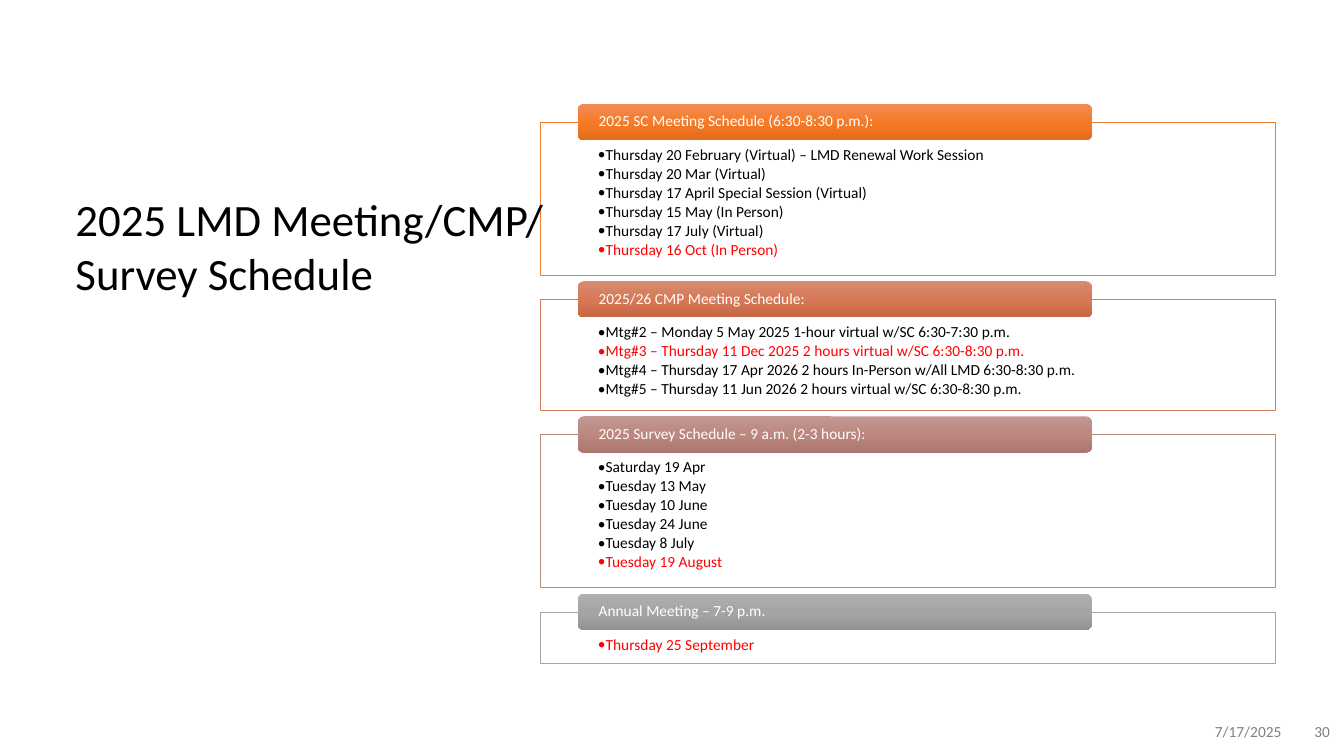
from copy import deepcopy

from lxml.etree import SubElement
from pptx import Presentation
from pptx.dml.color import RGBColor
from pptx.enum.shapes import MSO_SHAPE
from pptx.enum.text import MSO_ANCHOR, MSO_AUTO_SIZE, PP_ALIGN
from pptx.oxml.ns import qn
from pptx.util import Inches, Pt

COLORS = {"black": "000000", "white": "FFFFFF", "red": "FF0000", "gray": "808080"}

PANEL_LEFT, PANEL_TOP, PANEL_WIDTH, PANEL_GAP = 5.36, 1.21, 7.29, 0.24
TAB_INDENT, TAB_RISE, TAB_WIDTH, TAB_HEIGHT = 0.37, 0.18, 5.1, 0.36

SCHEDULES = [
    {
        "heading": "2025 SC Meeting Schedule (6:30-8:30 p.m.):",
        "height": 1.52,
        "border": "ED7D31",
        "gradient": ["F18C57", "F67B28", "E56C19"],
        "dates": [
            "Thursday 20 February (Virtual) – LMD Renewal Work Session",
            "Thursday 20 Mar (Virtual)",
            "Thursday 17 April Special Session (Virtual)",
            "Thursday 15 May (In Person)",
            "Thursday 17 July (Virtual)",
            "Thursday 16 Oct (In Person)",
        ],
        "upcoming": 5,
    },
    {
        "heading": "2025/26 CMP Meeting Schedule:",
        "height": 1.1,
        "border": "D17B5C",
        "gradient": ["D78B72", "D77956", "C66846"],
        "dates": [
            "Mtg#2 – Monday 5 May 2025 1-hour virtual w/SC 6:30-7:30 p.m.",
            "Mtg#3 – Thursday 11 Dec 2025 2 hours virtual w/SC 6:30-8:30 p.m.",
            "Mtg#4 – Thursday 17 Apr 2026 2 hours In-Person w/All LMD 6:30-8:30 p.m.",
            "Mtg#5 – Thursday 11 Jun 2026 2 hours virtual w/SC 6:30-8:30 p.m.",
        ],
        "upcoming": 1,
    },
    {
        "heading": "2025 Survey Schedule – 9 a.m. (2-3 hours):",
        "height": 1.52,
        "border": "B98A82",
        "gradient": ["C19791", "BC8880", "AA766E"],
        "dates": [
            "Saturday 19 Apr",
            "Tuesday 13 May",
            "Tuesday 10 June",
            "Tuesday 24 June",
            "Tuesday 8 July",
            "Tuesday 19 August",
        ],
        "upcoming": 5,
    },
    {
        "heading": "Annual Meeting – 7-9 p.m.",
        "height": 0.51,
        "border": "A5A5A5",
        "gradient": ["AFAFAF", "A5A5A5", "939393"],
        "dates": ["Thursday 25 September"],
        "upcoming": 0,
    },
]


def format_paragraph(paragraph, size, color, align=PP_ALIGN.LEFT):
    """Set the alignment of a paragraph and the font of its runs."""
    paragraph.alignment = align
    for run in paragraph.runs:
        run.font.name = "Calibri"
        run.font.size = Pt(size)
        run.font.color.rgb = RGBColor.from_string(color)


def set_margins(frame, side, top=0, bottom=0):
    """Set the insets of a text frame in inches."""
    frame.margin_left = frame.margin_right = Inches(side)
    frame.margin_top, frame.margin_bottom = Inches(top), Inches(bottom)


def add_bullet(paragraph):
    """Give a paragraph a round bullet with a narrow hanging indent."""
    properties = paragraph._p.get_or_add_pPr()
    properties.set("marL", str(Inches(0.06)))
    properties.set("indent", str(-Inches(0.06)))
    SubElement(properties, qn("a:buFont")).set("typeface", "Calibri")
    SubElement(properties, qn("a:buChar")).set("char", "•")


def fill_gradient(shape, colors):
    """Fill a shape from top to bottom with evenly spaced colours."""
    shape.fill.gradient()
    shape.fill.gradient_angle = 270
    stop_list = shape._element.spPr.find(qn("a:gradFill")).find(qn("a:gsLst"))
    while len(stop_list) < len(colors):
        stop_list.append(deepcopy(stop_list[0]))
    for index, (stop, color) in enumerate(zip(shape.fill.gradient_stops, colors)):
        stop.color.rgb = RGBColor.from_string(color)
        stop.position = index / (len(colors) - 1)


def add_panel(slide, schedule, left, top, width, height):
    """Draw the outlined panel that lists the dates of one schedule."""
    panel = slide.shapes.add_shape(
        MSO_SHAPE.RECTANGLE, Inches(left), Inches(top), Inches(width), Inches(height))
    panel.shadow.inherit = False
    panel.fill.solid()
    panel.fill.fore_color.rgb = RGBColor.from_string(COLORS["white"])
    white = panel._element.spPr.find(qn("a:solidFill"))[0]
    SubElement(white, qn("a:alpha")).set("val", "90000")
    panel.line.color.rgb = RGBColor.from_string(schedule["border"])
    panel.line.width = Pt(0.5)

    frame = panel.text_frame
    frame.word_wrap = True
    frame.vertical_anchor = MSO_ANCHOR.TOP
    set_margins(frame, 0.57, 0.25, 0.09)
    frame.text = "\n".join(schedule["dates"])
    for index, date in enumerate(frame.paragraphs):
        color = COLORS["red" if index == schedule["upcoming"] else "black"]
        format_paragraph(date, 11, color)
        date.line_spacing = 0.9
        date.space_after = Pt(1.65)
        add_bullet(date)


def add_tab(slide, schedule, left, top, width, height):
    """Draw the rounded heading tab of one schedule."""
    tab = slide.shapes.add_shape(
        MSO_SHAPE.ROUNDED_RECTANGLE, Inches(left), Inches(top), Inches(width), Inches(height))
    tab.shadow.inherit = False
    tab.line.fill.background()
    fill_gradient(tab, schedule["gradient"])

    frame = tab.text_frame
    frame.word_wrap = True
    frame.vertical_anchor = MSO_ANCHOR.MIDDLE
    set_margins(frame, 0.19)
    frame.text = schedule["heading"]
    format_paragraph(frame.paragraphs[0], 11, COLORS["white"])
    frame.paragraphs[0].line_spacing = 0.9


def add_schedules(slide, left, top, width):
    """Stack the schedules, each with a tab over its panel's top edge."""
    for schedule in SCHEDULES:
        add_panel(slide, schedule, left, top, width, schedule["height"])
        add_tab(slide, schedule, left + TAB_INDENT, top - TAB_RISE, TAB_WIDTH, TAB_HEIGHT)
        top += schedule["height"] + PANEL_GAP


def add_title(slide, left, top, width, height):
    """Write the two-line slide title."""
    title = slide.shapes.add_textbox(Inches(left), Inches(top), Inches(width), Inches(height))
    frame = title.text_frame
    frame.word_wrap = False
    frame.auto_size = MSO_AUTO_SIZE.SHAPE_TO_FIT_TEXT
    frame.text = "2025 LMD Meeting/CMP/\nSurvey Schedule"
    for line in frame.paragraphs:
        format_paragraph(line, 32, COLORS["black"])


def add_footer(slide, text, left, top, width, height):
    """Write one right-aligned footer entry."""
    footer = slide.shapes.add_textbox(Inches(left), Inches(top), Inches(width), Inches(height))
    frame = footer.text_frame
    frame.word_wrap = True
    frame.vertical_anchor = MSO_ANCHOR.MIDDLE
    frame.text = text
    format_paragraph(frame.paragraphs[0], 11, COLORS["gray"], PP_ALIGN.RIGHT)


def main():
    """Build the schedule slide and save it."""
    presentation = Presentation()
    presentation.slide_width, presentation.slide_height = Inches(13.33), Inches(7.5)
    slide = presentation.slides.add_slide(presentation.slide_layouts[6])
    add_footer(slide, "7/17/2025", 9.81, 7.06, 3, 0.4)
    add_footer(slide, "30", 12.8, 7.06, 0.49, 0.4)
    add_schedules(slide, PANEL_LEFT, PANEL_TOP, PANEL_WIDTH)
    add_title(slide, 0.65, 1.85, 4.89, 1.18)
    presentation.save("out.pptx")


if __name__ == "__main__":
    main()
